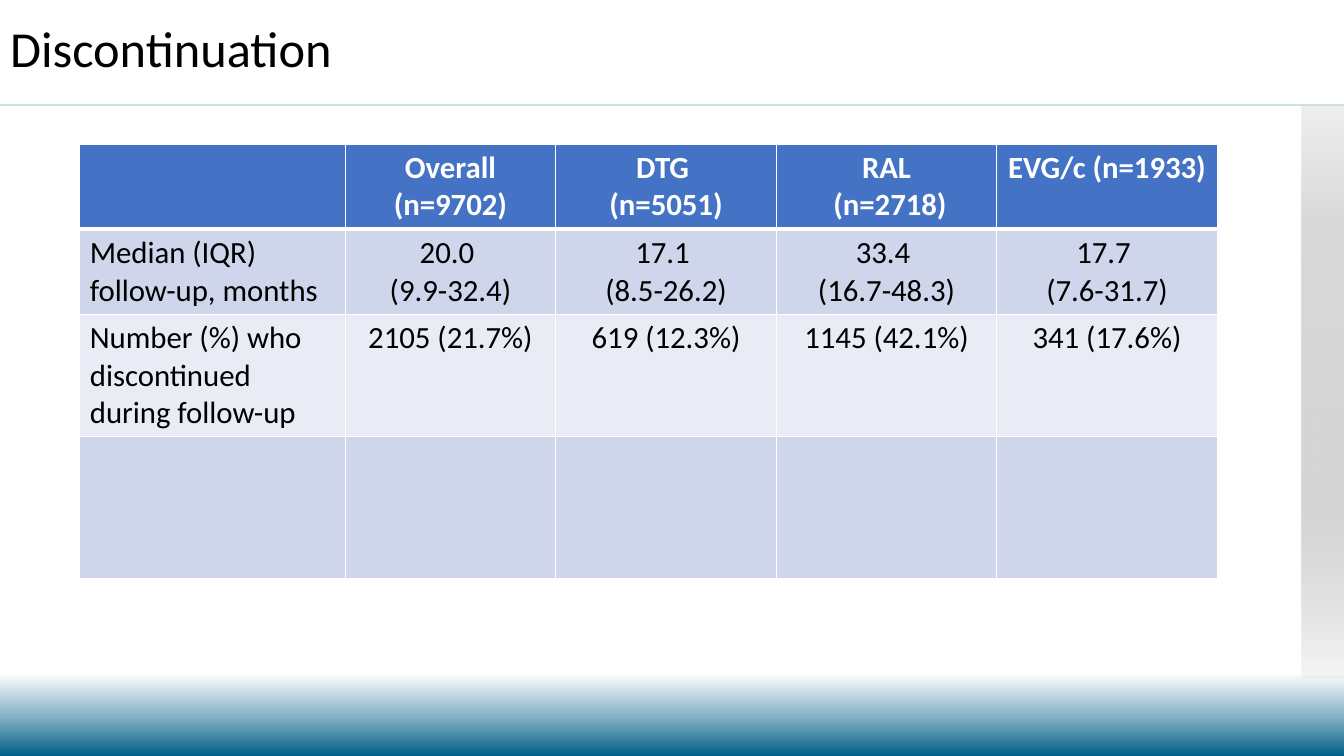
from dataclasses import dataclass

from lxml.etree import SubElement as Sub
from pptx import Presentation
from pptx.dml.color import RGBColor as Rgb
from pptx.enum.shapes import MSO_CONNECTOR as Link, MSO_SHAPE as Shape
from pptx.enum.text import MSO_ANCHOR as Anchor, MSO_AUTO_SIZE as Fit, PP_ALIGN as Align
from pptx.oxml.ns import qn
from pptx.util import Pt

HUES = {
    "white": "FFFFFF", "black": "000000", "teal": "005F86", "mist": "80AFC3",
    "pale": "D9D9D9", "grey": "D5D5D5", "dark": "BFBFBF",
    "head": "4472C4", "odd": "CFD5EA", "even": "E9EBF5",
}
FONT = "Calibri"
WIDE, HIGH = 960, 540
RULE = 75


@dataclass
class Stop:
    spot: int
    hue: str
    alpha: int = 100


@dataclass
class Row:
    high: float
    fill: str
    texts: tuple[str, ...] = ("",) * 5
    ink: str = "black"
    bold: bool = False
    top: int = 1
    base: int = 1


SKY = [Stop(89, "white"), Stop(95, "mist"), Stop(100, "teal")]
SHADE = [Stop(0, "pale", 40), Stop(21, "pale"), Stop(70, "grey"), Stop(100, "dark", 13)]
COLS = [189.5, 150.5, 157.5, 157.5, 157.5]
ROWS = [
    Row(44.5, "head", ("", "Overall (n=9702)", "DTG \n(n=5051)", "RAL\n (n=2718)",
                       "EVG/c (n=1933)"), "white", True, base=3),
    Row(52.5, "odd", ("Median (IQR) follow-up, months", "20.0 \n(9.9-32.4)",
                      "17.1 \n(8.5-26.2)", "33.4 \n(16.7-48.3)",
                      "17.7 \n(7.6-31.7)"), top=3),
    Row(70.5, "even", ("Number (%) who discontinued during follow-up", "2105 (21.7%)",
                       "619 (12.3%)", "1145 (42.1%)", "341 (17.6%)")),
    Row(101, "odd"),
]


def tint(node, hue: str, alpha: int = 100) -> None:
    """Add a colour, see-through below alpha 100, to an XML node."""
    clr = Sub(node, qn("a:srgbClr"), val=HUES[hue])
    if alpha < 100:
        Sub(clr, qn("a:alpha"), val=str(alpha * 1000))


def grade(fill, root, stops: list[Stop]) -> None:
    """Give a fill, found under root, a downward gradient."""
    fill.gradient()
    fill.gradient_angle = 270
    group = root.find(".//" + qn("a:gsLst"))
    for old in list(group):
        group.remove(old)
    for stop in stops:
        tint(Sub(group, qn("a:gs"), pos=str(stop.spot * 1000)), stop.hue, stop.alpha)


def write(para, text: str, size: int, ink: str, bold: bool = False) -> None:
    for i, part in enumerate(text.split("\n")):
        if i:
            para.add_line_break()
        run = para.add_run()
        run.text = part
        font = run.font
        font.name, font.size, font.bold = FONT, Pt(size), bold
        font.color.rgb = Rgb.from_string(HUES[ink])


def edge(cell, top: int, base: int) -> None:
    props = cell._tc.get_or_add_tcPr()
    for side, width in zip("LRTB", (1, 1, top, base)):
        line = Sub(props, qn("a:ln" + side), w=str(Pt(width)))
        tint(Sub(line, qn("a:solidFill")), "white")


def add_rule(slide) -> None:
    rule = slide.shapes.add_connector(Link.STRAIGHT, 0, Pt(RULE), Pt(WIDE), Pt(RULE))
    rule.line.width = Pt(1)
    rule.line.color.rgb = Rgb.from_string(HUES["teal"])
    clr = rule.element.spPr.find(".//" + qn("a:srgbClr"))
    Sub(clr, qn("a:alpha"), val="30000")
    Sub(rule.element.spPr, qn("a:effectLst"))


def add_band(slide) -> None:
    band = slide.shapes.add_shape(Shape.RECTANGLE, Pt(930), Pt(75.5), Pt(30), Pt(409.5))
    band.shadow.inherit = False
    band.line.fill.background()
    grade(band.fill, band.element, SHADE)


def set_title(slide, text: str) -> None:
    title = slide.shapes.title
    title.left, title.top, title.width, title.height = 0, Pt(4.5), Pt(828), Pt(64)
    frame = title.text_frame
    frame.auto_size, frame.word_wrap = Fit.NONE, True
    frame.vertical_anchor = Anchor.MIDDLE
    para = frame.paragraphs[0]
    para.alignment, para.line_spacing = Align.LEFT, 0.9
    write(para, text, 36, "black")


def add_grid(slide) -> None:
    high = sum(row.high for row in ROWS)
    grid = slide.shapes.add_table(len(ROWS), len(COLS), Pt(57), Pt(103),
                                  Pt(sum(COLS)), Pt(high)).table
    for col, width in zip(grid.columns, COLS):
        col.width = Pt(width)
    for y, row in enumerate(ROWS):
        grid.rows[y].height = Pt(row.high)
        for x, text in enumerate(row.texts):
            cell = grid.cell(y, x)
            edge(cell, row.top, row.base)
            cell.fill.solid()
            cell.fill.fore_color.rgb = Rgb.from_string(HUES[row.fill])
            para = cell.text_frame.paragraphs[0]
            para.alignment = Align.CENTER if x else Align.LEFT
            if text:
                write(para, text, 22, row.ink, row.bold)


def main() -> None:
    deck = Presentation()
    deck.slide_width, deck.slide_height = Pt(WIDE), Pt(HIGH)
    slide = deck.slides.add_slide(deck.slide_layouts[5])
    grade(slide.background.fill, slide.element, SKY)
    add_rule(slide)
    add_band(slide)
    set_title(slide, "Discontinuation")
    add_grid(slide)
    deck.save("out.pptx")


if __name__ == "__main__":
    main()
